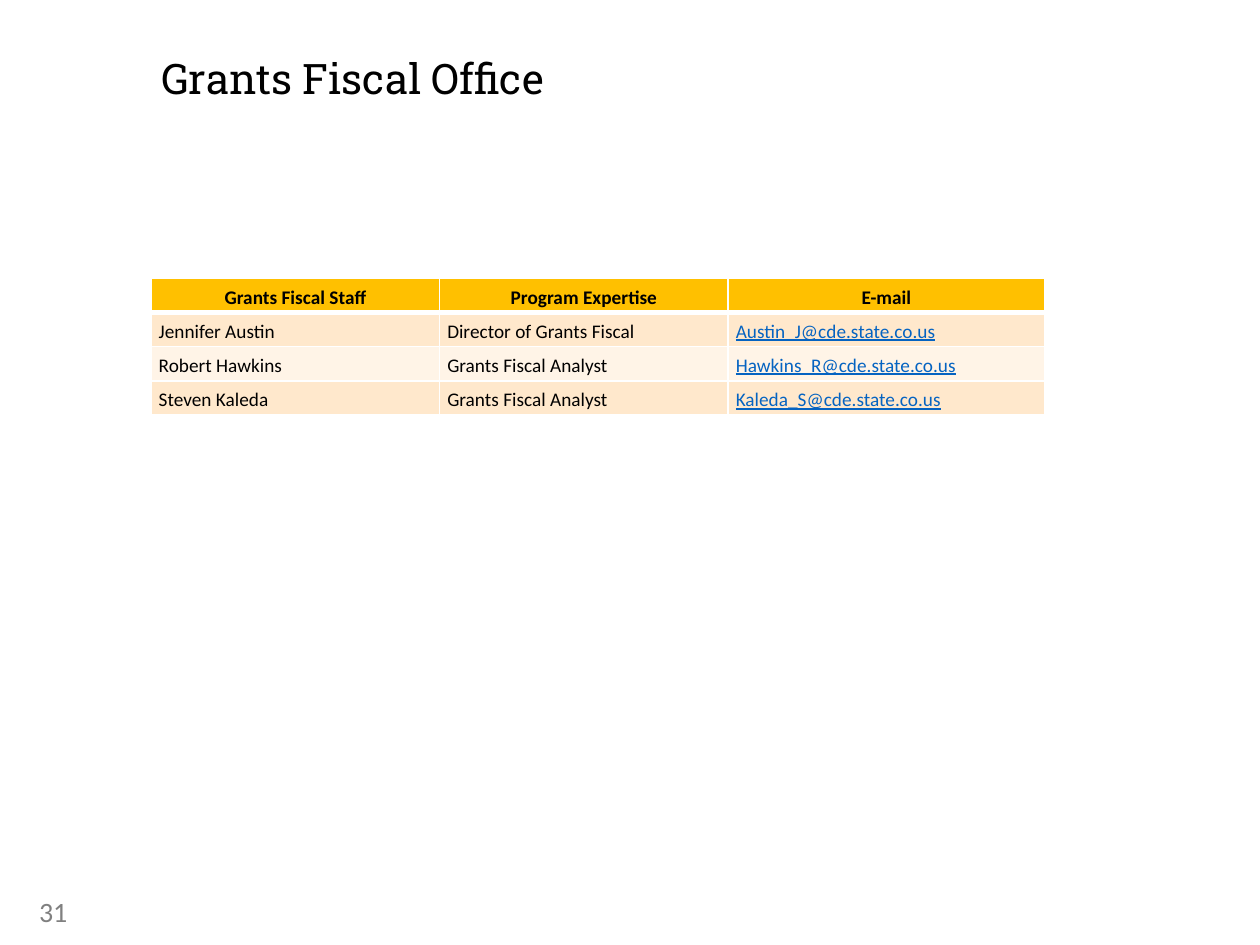
from lxml import etree
from pptx import Presentation
from pptx.dml.color import RGBColor
from pptx.enum.text import MSO_ANCHOR, PP_ALIGN
from pptx.oxml.ns import qn
from pptx.util import Inches, Pt

TOP, MIDDLE = MSO_ANCHOR.TOP, MSO_ANCHOR.MIDDLE
LEFT, CENTER = PP_ALIGN.LEFT, PP_ALIGN.CENTER

COLORS = {
    "text": "000000",
    "number": "808080",
    "link": "0563C1",
    "header": "FFC000",
    "odd_row": "FFE8CC",
    "even_row": "FFF4E7",
    "border": "FFFFFF",
}
STAFF = [
    ("Grants Fiscal Staff", "Program Expertise", "E-mail"),
    ("Jennifer Austin", "Director of Grants Fiscal", "Austin_J@cde.state.co.us"),
    ("Robert Hawkins", "Grants Fiscal Analyst", "Hawkins_R@cde.state.co.us"),
    ("Steven Kaleda", "Grants Fiscal Analyst", "Kaleda_S@cde.state.co.us"),
]
COLUMN_WIDTHS = (2.29, 2.29, 2.51)
ROW_HEIGHT = 0.27
EMAIL_COLUMN = 2


def set_text(text_frame, text, size, color, font="Calibri", align=LEFT, spacing=1.0):
    """Write one paragraph and return the font of its run."""
    text_frame.text = text
    paragraph = text_frame.paragraphs[0]
    paragraph.alignment = align
    paragraph.line_spacing = spacing
    run_font = paragraph.runs[0].font
    run_font.name = font
    run_font.size = Pt(size)
    run_font.color.rgb = RGBColor.from_string(COLORS[color])
    return run_font


def set_margins(target, horizontal, vertical):
    target.margin_left = target.margin_right = Inches(horizontal)
    target.margin_top = target.margin_bottom = Inches(vertical)


def set_borders(cell, top, bottom):
    """Draw the four cell borders; widths are in points."""
    properties = cell._tc.get_or_add_tcPr()
    widths = {"lnL": 1, "lnR": 1, "lnT": top, "lnB": bottom}
    for position, (side, width) in enumerate(widths.items()):
        line = etree.Element(qn(f"a:{side}"), w=str(Pt(width)))
        fill = etree.SubElement(line, qn("a:solidFill"))
        etree.SubElement(fill, qn("a:srgbClr"), val=COLORS["border"])
        properties.insert(position, line)


def add_title(slide, text):
    title = slide.shapes.title
    title.left, title.top = Inches(1.28), Inches(0.46)
    title.width, title.height = Inches(5.64), Inches(0.65)
    text_frame = title.text_frame
    set_margins(text_frame, 0, 0)
    text_frame.vertical_anchor = TOP
    set_text(text_frame, text, 24, "text", font="Roboto Slab", spacing=0.9)


def add_slide_number(slide, text):
    box = slide.shapes.add_textbox(Inches(0.24), Inches(7.03), Inches(2.25), Inches(0.4))
    text_frame = box.text_frame
    text_frame.word_wrap = True
    text_frame.vertical_anchor = MIDDLE
    set_margins(text_frame, 0.07, 0.04)
    set_text(text_frame, text, 16, "number")


def format_cell(cell, text, row, column):
    is_header = row == 0
    is_link = column == EMAIL_COLUMN and not is_header
    set_margins(cell, 0.06, 0.03)
    font = set_text(cell.text_frame, text, 11, "link" if is_link else "text",
                    align=CENTER if is_header else LEFT, spacing=1.15)
    font.bold = is_header
    font.underline = is_link
    fill_name = "header" if is_header else "odd_row" if row % 2 else "even_row"
    cell.fill.solid()
    cell.fill.fore_color.rgb = RGBColor.from_string(COLORS[fill_name])
    set_borders(cell, top=3 if row == 1 else 1, bottom=3 if is_header else 1)


def add_staff_table(slide):
    frame = slide.shapes.add_table(
        len(STAFF), len(COLUMN_WIDTHS), Inches(1.2), Inches(2.21),
        Inches(sum(COLUMN_WIDTHS)), Inches(ROW_HEIGHT * len(STAFF)))
    table = frame.table
    for column, width in zip(table.columns, COLUMN_WIDTHS):
        column.width = Inches(width)
    for row, texts in enumerate(STAFF):
        table.rows[row].height = Inches(ROW_HEIGHT)
        for column, text in enumerate(texts):
            format_cell(table.cell(row, column), text, row, column)


def main():
    presentation = Presentation()
    presentation.slide_width, presentation.slide_height = Inches(10), Inches(7.5)
    # "Title Only" layout
    slide = presentation.slides.add_slide(presentation.slide_layouts[5])
    add_title(slide, "Grants Fiscal Office")
    add_slide_number(slide, "31")
    add_staff_table(slide)
    presentation.save("out.pptx")


if __name__ == "__main__":
    main()
